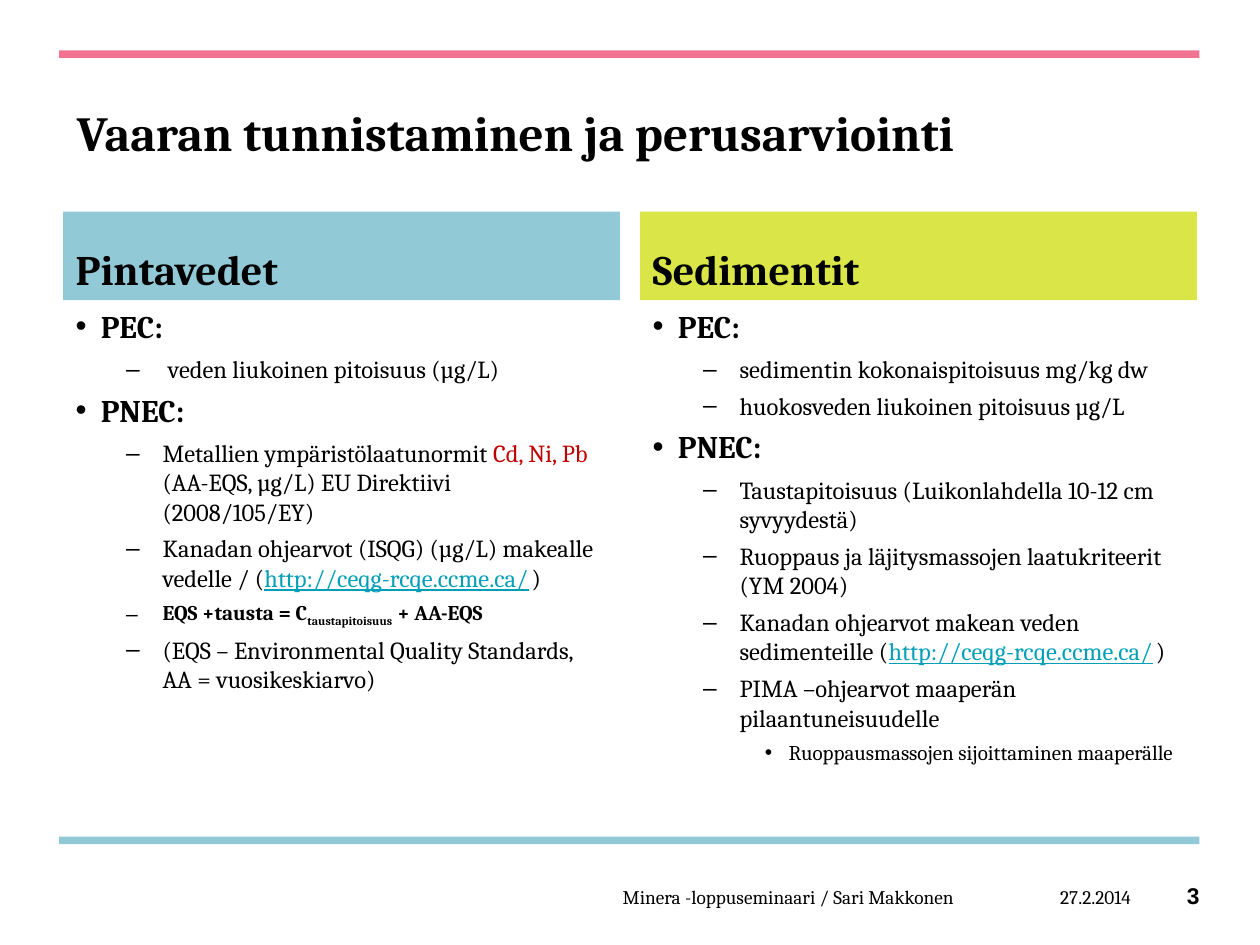
from dataclasses import dataclass

from lxml import etree
from pptx import Presentation
from pptx import util as u
from pptx.dml.color import RGBColor
from pptx.enum import shapes, text
from pptx.oxml import ns


@dataclass(frozen=True)
class Theme:
    serif: str = "Cambria"
    sans: str = "Arial"
    ink: str = "000000"
    alert: str = "C00000"
    link: str = "009FB8"
    pink: str = "F17391"
    blue: str = "92C9D7"
    lime: str = "DAE648"
    title: float = 28
    heading: float = 24
    footer: float = 11
    number: float = 13
    levels: tuple = (18, 14, 12)


THEME = Theme()
WIDTH, HEIGHT = 10, 7.5
COMPARISON_LAYOUT = 4
# Bullet, text indent and hanging indent in inches for each list level
BULLETS = (("•", 0.2, 0.2), ("–", 0.69, 0.29), ("•", 1.08, 0.19))

ALERT = {"color": THEME.alert}
LINK = {"color": THEME.link, "underline": True}
RAISED = {"baseline": 30}
LOWERED = {"baseline": -25}
GUIDELINE_LINK = [("http://ceqg-rcqe.ccme.ca/", LINK), (" ", RAISED), (")", {})]

# Each item: level, runs and, where it differs from its level, size and weight
SURFACE_WATERS = [
    (0, "PEC:"),
    (1, " veden liukoinen pitoisuus (µg/L)"),
    (0, "PNEC:"),
    (1, [("Metallien ympäristölaatunormit ", {}), ("Cd, Ni, Pb", ALERT),
         (" (AA-EQS, µg/L) EU Direktiivi (2008/105/EY)", {})]),
    (1, [("Kanadan ohjearvot (ISQG) (µg/L) makealle vedelle / (", {}),
         *GUIDELINE_LINK]),
    (1, [("EQS +tausta = C", {}), ("taustapitoisuus", LOWERED),
         (" + AA-EQS", {})], 12, True),
    (1, "(EQS – Environmental Quality Standards, AA = vuosikeskiarvo)"),
]
SEDIMENTS = [
    (0, "PEC:"),
    (1, "sedimentin kokonaispitoisuus mg/kg dw"),
    (1, "huokosveden liukoinen pitoisuus µg/L"),
    (0, "PNEC:"),
    (1, "Taustapitoisuus (Luikonlahdella 10-12 cm syvyydestä)"),
    (1, "Ruoppaus ja läjitysmassojen laatukriteerit (YM 2004)"),
    (1, [("Kanadan ohjearvot makean veden sedimenteille (", {}),
         *GUIDELINE_LINK]),
    (1, "PIMA –ohjearvot maaperän pilaantuneisuudelle"),
    (2, "Ruoppausmassojen sijoittaminen maaperälle"),
]


def inches(box):
    return [u.Inches(length) for length in box]


def place(holder, box):
    holder.left, holder.top, holder.width, holder.height = inches(box)


def style(run, size, bold=False, color=THEME.ink, face=THEME.serif,
          underline=False, baseline=0):
    font = run.font
    font.name, font.size, font.bold = face, u.Pt(size), bold
    font.underline = underline
    font.color.rgb = RGBColor.from_string(color)
    if baseline:
        run._r.get_or_add_rPr().set("baseline", str(baseline * 1000))


def set_frame(frame, anchor, margins=(0.1, 0.05, 0.1, 0.05)):
    frame.word_wrap = True
    frame.auto_size = text.MSO_AUTO_SIZE.NONE
    frame.vertical_anchor = anchor
    (frame.margin_left, frame.margin_top,
     frame.margin_right, frame.margin_bottom) = inches(margins)


def add_bullet(paragraph, level):
    mark, indent, hanging = BULLETS[level]
    paragraph.level = level
    props = paragraph._p.get_or_add_pPr()
    props.set("marL", str(u.Inches(indent)))
    props.set("indent", str(-u.Inches(hanging)))
    etree.SubElement(props, ns.qn("a:buFont")).set("typeface", THEME.sans)
    etree.SubElement(props, ns.qn("a:buChar")).set("char", mark)


def fill_line(frame, words, size, bold, **options):
    frame.text = words
    line = frame.paragraphs[0]
    line.space_before = u.Pt(0)
    style(line.runs[0], size, bold, **options)
    return line


def add_rule(slide, box, color):
    rule = slide.shapes.add_shape(shapes.MSO_SHAPE.RECTANGLE, *inches(box))
    rule.shadow.inherit = False
    rule.fill.solid()
    rule.fill.fore_color.rgb = RGBColor.from_string(color)
    rule.line.fill.background()


def fill_title(holder, box, words):
    place(holder, box)
    set_frame(holder.text_frame, text.MSO_ANCHOR.TOP)
    line = fill_line(holder.text_frame, words, THEME.title, True)
    line.alignment = text.PP_ALIGN.LEFT
    line.line_spacing = u.Pt(34)


def fill_column(heading, listing, box, name, color, items):
    left, top, width, height = box
    band = 0.14 * height

    # Coloured heading band
    place(heading, (left, top, width, band))
    heading.fill.solid()
    heading.fill.fore_color.rgb = RGBColor.from_string(color)
    set_frame(heading.text_frame, text.MSO_ANCHOR.BOTTOM)
    line = fill_line(heading.text_frame, name, THEME.heading, True)
    line.space_after = u.Pt(0.3 * THEME.heading)

    # Bulleted list
    place(listing, (left, top + band, width, height - band))
    frame = listing.text_frame
    set_frame(frame, text.MSO_ANCHOR.TOP)
    for number, (level, runs, *special) in enumerate(items):
        size, bold = special or (THEME.levels[level], level == 0)
        item = frame.add_paragraph() if number else frame.paragraphs[0]
        add_bullet(item, level)
        item.space_before, item.space_after = u.Pt(0), u.Pt(0.3 * size)
        for words, options in [(runs, {})] if isinstance(runs, str) else runs:
            run = item.add_run()
            run.text = words
            style(run, size, bold, **options)


def add_footer(slide, box):
    left, top, width, height = box
    middle, high = text.MSO_ANCHOR.MIDDLE, text.MSO_ANCHOR.TOP
    small = {"size": THEME.footer, "bold": False}
    strong = {"size": THEME.number, "bold": True, "face": THEME.sans}
    # Right edge as a share of the footer, width, anchor, top inset, style
    parts = [
        ("Minera -loppuseminaari / Sari Makkonen", 0.785, 4.85, middle, 0, small),
        ("27.2.2014", 0.94, 0.96, middle, 0, small),
        ("3", 1, 0.39, high, 0.02, strong),
    ]
    for words, edge, span, anchor, inset, look in parts:
        part = slide.shapes.add_textbox(
            *inches((left + edge * width - span, top, span, height)))
        set_frame(part.text_frame, anchor, (0, inset, 0, 0))
        line = fill_line(part.text_frame, words, **look)
        line.alignment = text.PP_ALIGN.RIGHT


def main():
    deck = Presentation()
    deck.slide_width, deck.slide_height = u.Inches(WIDTH), u.Inches(HEIGHT)
    slide = deck.slides.add_slide(deck.slide_layouts[COMPARISON_LAYOUT])
    title, *holders = slide.placeholders

    # Rules at top and bottom
    for top, color in ((0.4, THEME.pink), (6.64, THEME.blue)):
        add_rule(slide, (0.47, top, 9.05, 0.06), color)

    fill_title(title, (0.51, 0.76, 9, 0.94),
               "Vaaran tunnistaminen ja perusarviointi")

    # Two equal columns
    margin, gutter = 0.05 * WIDTH, 0.16
    width = (WIDTH - 2 * margin - gutter) / 2
    columns = [("Pintavedet", THEME.blue, SURFACE_WATERS),
               ("Sedimentit", THEME.lime, SEDIMENTS)]
    for index, column in enumerate(columns):
        heading, listing = holders[2 * index:2 * index + 2]
        left = margin + index * (width + gutter)
        fill_column(heading, listing, (left, 1.68, width, 5.02), *column)

    add_footer(slide, (0.47, 6.98, 9.05, 0.27))
    deck.save("out.pptx")


if __name__ == "__main__":
    main()
